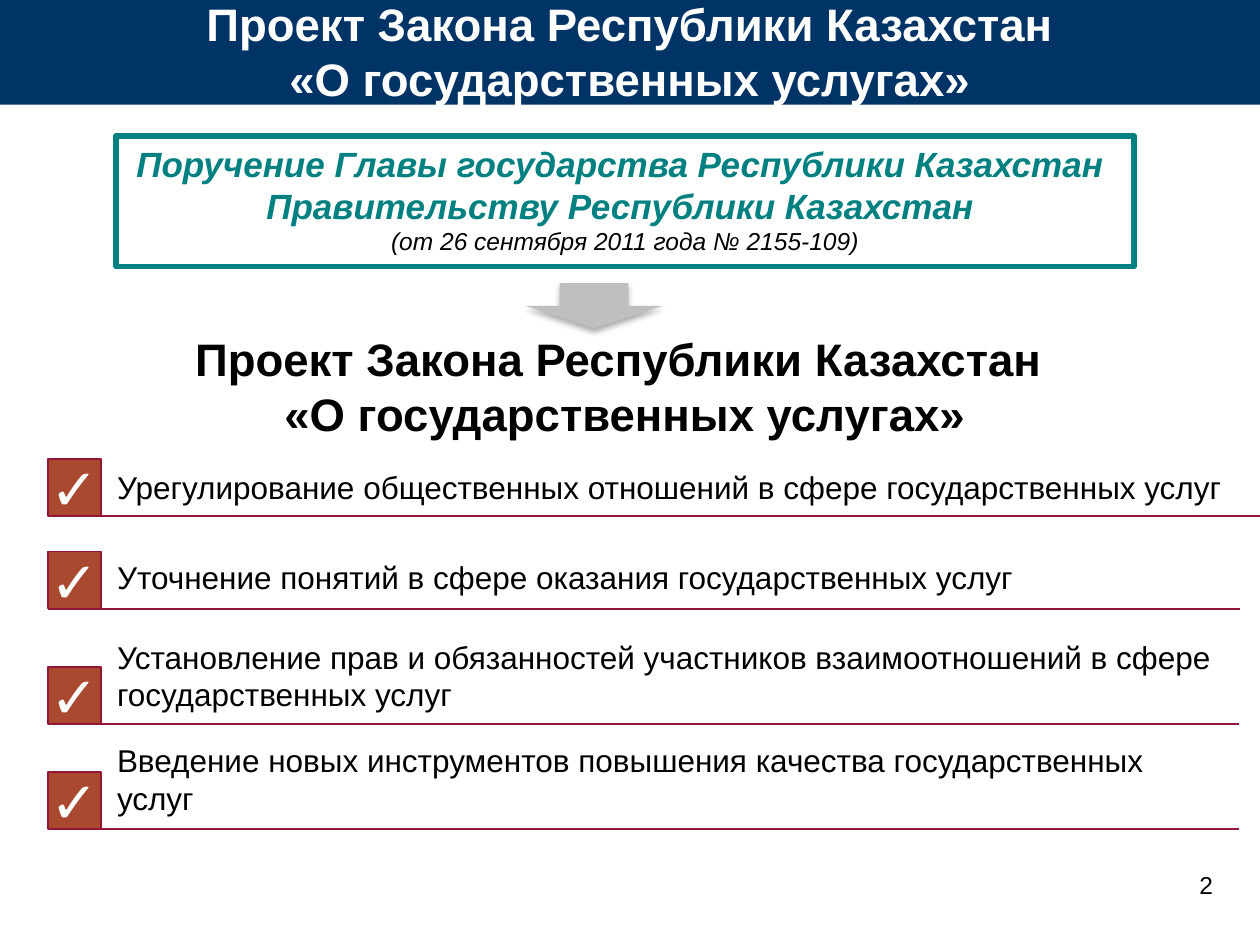
"""Builds the slide on the draft law on public services."""
import pptx
import pptx.dml.color
import pptx.enum.shapes
import pptx.enum.text
import pptx.oxml
import pptx.oxml.ns
import pptx.util

Cm = pptx.util.Cm
Pt = pptx.util.Pt
RGBColor = pptx.dml.color.RGBColor
Shape = pptx.enum.shapes.MSO_SHAPE
Align = pptx.enum.text.PP_ALIGN
Anchor = pptx.enum.text.MSO_ANCHOR

NAVY = RGBColor(0x00, 0x33, 0x66)
TEAL = RGBColor(0x00, 0x80, 0x80)
GREY = RGBColor(0xBF, 0xBF, 0xBF)
BRICK = RGBColor(0xA9, 0x49, 0x2F)
CRIMSON = RGBColor(0x93, 0x16, 0x38)
WHITE = RGBColor(0xFF, 0xFF, 0xFF)
BLACK = RGBColor(0x00, 0x00, 0x00)

MARK_LEFT, MARK_WIDTH, MARK_HEIGHT = 0.97, 1.07, 1.15
TEXT_LEFT = 2.11
GOALS = [
    ("Урегулирование общественных отношений в сфере государственных услуг", 9.32, 1.02, 10.41, 25.4),
    ("Уточнение понятий в сфере оказания государственных услуг", 11.13, 1.02, 12.27, 24.99),
    ("Установление прав и обязанностей участников взаимоотношений в сфере государственных услуг",
     12.73, 1.78, 14.6, 24.97),
    ("Введение новых инструментов повышения качества государственных услуг", 14.81, 1.78, 16.71, 24.97),
]


def add_span(para, text, size, color, bold=False, italic=False):
    span = para.add_run()
    span.text = text
    font = span.font
    font.name, font.size, font.bold, font.italic = "Arial", Pt(size), bold, italic
    font.color.rgb = color


def write_lines(frame, lines, align):
    """Each line is (text, size, color, bold, italic), the last two optional."""
    for index, line in enumerate(lines):
        para = frame.paragraphs[0] if index == 0 else frame.add_paragraph()
        para.alignment = align
        add_span(para, *line)


def add_text(page, left, top, width, height, lines, align=Align.LEFT):
    box = page.shapes.add_textbox(Cm(left), Cm(top), Cm(width), Cm(height))
    box.text_frame.word_wrap = True
    write_lines(box.text_frame, lines, align)
    return box


def add_block(page, kind, left, top, width, height, fill=None, line=None, weight=1):
    block = page.shapes.add_shape(kind, Cm(left), Cm(top), Cm(width), Cm(height))
    block.shadow.inherit = False
    if fill is None:
        block.fill.background()
    else:
        block.fill.solid()
        block.fill.fore_color.rgb = fill
    if line is None:
        block.line.fill.background()
    else:
        block.line.color.rgb = line
        block.line.width = Pt(weight)
    return block


def add_soft_shadow(block):
    effects = block._element.spPr.find(pptx.oxml.ns.qn("a:effectLst"))
    effects.append(pptx.oxml.parse_xml(
        f'<a:outerShdw {pptx.oxml.ns.nsdecls("a")} blurRad="{Pt(3.5)}" dist="{Pt(2.2)}" '
        'dir="5400000" rotWithShape="0"><a:srgbClr val="000000"><a:alpha val="32000"/>'
        '</a:srgbClr></a:outerShdw>'))


def add_rule(page, left, right, top):
    rule = page.shapes.add_connector(
        pptx.enum.shapes.MSO_CONNECTOR.STRAIGHT, Cm(left), Cm(top), Cm(right), Cm(top))
    rule.line.color.rgb = CRIMSON
    rule.line.width = Pt(1.25)
    rule._element.spPr.append(pptx.oxml.parse_xml(
        f'<a:effectLst {pptx.oxml.ns.nsdecls("a")}/>'))


def add_goal(page, text, top, height, rule_top, rule_right):
    mark = add_block(page, Shape.RECTANGLE, MARK_LEFT, rule_top - MARK_HEIGHT,
                     MARK_WIDTH, MARK_HEIGHT, BRICK, CRIMSON)
    frame = mark.text_frame
    frame.word_wrap = False
    frame.vertical_anchor = Anchor.MIDDLE
    frame.margin_top = frame.margin_bottom = 0
    write_lines(frame, [("✓", 33, WHITE, True)], Align.CENTER)
    add_rule(page, MARK_LEFT, rule_right, rule_top)
    add_text(page, TEXT_LEFT, top, rule_right - TEXT_LEFT, height, [(text, 18, BLACK)])


def main():
    deck = pptx.Presentation()
    deck.slide_width, deck.slide_height = Cm(25.4), Cm(19.05)
    page = deck.slides.add_slide(deck.slide_layouts[6])

    add_block(page, Shape.RECTANGLE, 0, 0, 25.4, 2.11, NAVY)
    add_text(page, 0.4, -0.2, 24.6, 2.46, [
        ("Проект Закона Республики Казахстан", 26, WHITE, True),
        ("«О государственных услугах»", 26, WHITE, True),
    ], Align.CENTER)

    order = add_block(page, Shape.RECTANGLE, 2.34, 2.74, 20.52, 2.64, line=TEAL, weight=3)
    order.text_frame.vertical_anchor = Anchor.TOP
    write_lines(order.text_frame, [
        ("Поручение Главы государства Республики Казахстан ", 20, TEAL, True, True),
        ("Правительству Республики Казахстан ", 20, TEAL, True, True),
        ("(от 26 сентября 2011 года № 2155-109)", 14, BLACK, False, True),
    ], Align.CENTER)

    arrow = add_block(page, Shape.DOWN_ARROW, 10.59, 5.71, 2.77, 0.91, GREY)
    add_soft_shadow(arrow)
    add_text(page, 1.07, 6.55, 23.06, 2.49, [
        ("Проект Закона Республики Казахстан ", 26, BLACK, True),
        ("«О государственных услугах»", 26, BLACK, True),
    ], Align.CENTER)

    for goal in GOALS:
        add_goal(page, *goal)

    number = add_text(page, 23.93, 17.27, 0.84, 1.02, [("2", 14, BLACK)])
    add_span(number.text_frame.paragraphs[0], " ", 18, BLACK)
    deck.save("out.pptx")


if __name__ == "__main__":
    main()
